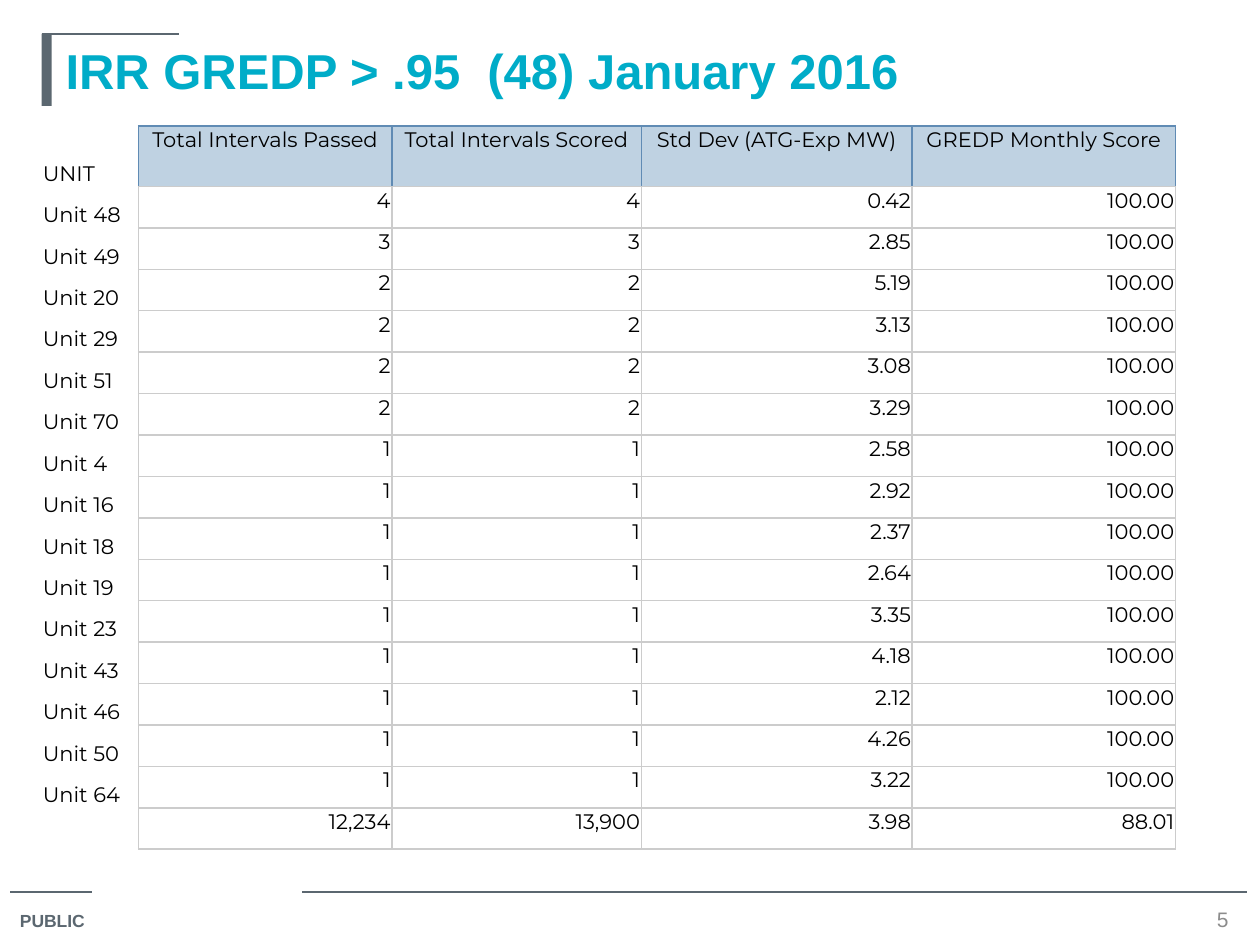
from dataclasses import dataclass

from lxml.etree import SubElement
from pptx import Presentation
from pptx.dml.color import RGBColor
from pptx.enum.shapes import MSO_CONNECTOR as Connector, MSO_SHAPE as Shape
from pptx.enum.text import MSO_ANCHOR as Anchor, MSO_AUTO_SIZE as AutoSize, PP_ALIGN as Align
from pptx.oxml.ns import qn
from pptx.util import Inches, Pt

COLORS = {
    "slate": "5B6770",
    "teal": "00ACC8",
    "page": "8C8C8C",
    "ink": "000000",
    "header": "BFD2E2",
    "header_rule": "608BB4",
    "grid_rule": "CCCCCC",
}
GRID_COLUMNS, GRID_ROWS = 100, 75
SLIDE_WIDTH, SLIDE_HEIGHT = Inches(10), Inches(7.5)
COLUMN_WIDTHS = [7.7, 20.1, 19.8, 21.5, 20.9]
HEADER_HEIGHT, UNIT_HEIGHT = 4.8, 3.29
HEADINGS = ["UNIT", "Total Intervals Passed", "Total Intervals Scored",
            "Std Dev (ATG-Exp MW)", "GREDP Monthly Score"]
UNIT_SCORES = [
    (48, 4, "0.42"), (49, 3, "2.85"), (20, 2, "5.19"), (29, 2, "3.13"),
    (51, 2, "3.08"), (70, 2, "3.29"), (4, 1, "2.58"), (16, 1, "2.92"),
    (18, 1, "2.37"), (19, 1, "2.64"), (23, 1, "3.35"), (43, 1, "4.18"),
    (46, 1, "2.12"), (50, 1, "4.26"), (64, 1, "3.22"),
]
TOTALS = ["", "12,234", "13,900", "3.98", "88.01"]


def across(columns):
    return round(SLIDE_WIDTH * columns / GRID_COLUMNS)


def down(rows):
    return round(SLIDE_HEIGHT * rows / GRID_ROWS)


@dataclass
class Box:
    left: float
    top: float
    width: float
    height: float

    def inner(self, left, top, width, height):
        return Box(self.left + left, self.top + top, width, height)

    def lengths(self):
        return across(self.left), down(self.top), across(self.width), down(self.height)


def color(name):
    return RGBColor.from_string(COLORS[name])


def apply(target, formats):
    for attribute, value in formats.items():
        setattr(target, attribute, value)


def write(frame, text, ink, font, align=Align.LEFT):
    paragraph = frame.paragraphs[0]
    paragraph.alignment = align
    if text:
        run = paragraph.add_run()
        run.text = text
        target = run.font
    else:
        target = paragraph.font
    apply(target, font)
    target.color.rgb = color(ink)


def add_rule(slide, box):
    left, top, width, height = box.lengths()
    rule = slide.shapes.add_connector(
        Connector.STRAIGHT, left, top, left + width, top + height)
    rule.line.color.rgb = color("slate")
    rule.line.width = Pt(0.75)
    SubElement(rule._element.spPr, qn("a:effectLst"))


def add_label(slide, box, text, ink, font, frame_format, align=Align.LEFT):
    frame = slide.shapes.add_textbox(*box.lengths()).text_frame
    apply(frame, frame_format)
    write(frame, text, ink, font, align)


def add_heading(slide, box):
    bar = slide.shapes.add_shape(Shape.RECTANGLE, *box.inner(0, 0, 0.8, 5.7).lengths())
    bar.shadow.inherit = False
    bar.fill.solid()
    bar.fill.fore_color.rgb = color("slate")
    bar.line.fill.background()
    add_rule(slide, box.inner(0, 0, 10.9, 0))

    title = slide.shapes.title
    left, top, width, height = box.inner(0.9, 0, box.width - 0.9, box.height).lengths()
    apply(title, {"left": left, "top": top, "width": width, "height": height})
    apply(title.text_frame, {"vertical_anchor": Anchor.TOP, "word_wrap": True,
                             "auto_size": AutoSize.NONE})
    write(title.text_frame, "IRR GREDP > .95  (48) January 2016", "teal",
          {"name": "Arial", "size": Pt(28), "bold": True})


def set_borders(cell, borders):
    properties = cell._tc.get_or_add_tcPr()
    for side in "LRTB":
        line = SubElement(properties, qn(f"a:ln{side}"), w=str(Pt(1)))
        if side in borders:
            fill = SubElement(line, qn("a:solidFill"))
            SubElement(fill, qn("a:srgbClr"), val=COLORS[borders[side]])
        else:
            SubElement(line, qn("a:noFill"))


def format_cell(cell, text, is_header, is_unit):
    apply(cell, {"margin_left": Inches(0.01), "margin_right": Inches(0.01),
                 "margin_top": Inches(0.01), "margin_bottom": 0,
                 "vertical_anchor": Anchor.BOTTOM if is_unit else Anchor.TOP})
    rule = "header_rule" if is_header else "grid_rule"
    if is_unit:
        borders, align = {"R": rule}, Align.LEFT
    else:
        borders = {"L": rule, "R": rule, "T": rule, "B": "grid_rule"}
        align = Align.CENTER if is_header else Align.RIGHT
    set_borders(cell, borders)
    if is_header and not is_unit:
        cell.fill.solid()
        cell.fill.fore_color.rgb = color("header")
    else:
        cell.fill.background()
    write(cell.text_frame, text, "ink", {"name": "Montserrat", "size": Pt(12)}, align)


def add_scores(slide, box):
    units = [[f"Unit {unit}", str(intervals), str(intervals), deviation, "100.00"]
             for unit, intervals, deviation in UNIT_SCORES]
    records = [HEADINGS, *units, TOTALS]
    scores = slide.shapes.add_table(len(records), len(HEADINGS), *box.lengths()).table
    apply(scores, {"first_row": False, "horz_banding": False})
    for column, width in zip(scores.columns, COLUMN_WIDTHS):
        column.width = across(width)
    for row_index, record in enumerate(records):
        scores.rows[row_index].height = down(UNIT_HEIGHT if row_index else HEADER_HEIGHT)
        for column_index, text in enumerate(record):
            format_cell(scores.cell(row_index, column_index), text,
                        row_index == 0, column_index == 0)


def add_footer(slide, box):
    add_rule(slide, box.inner(0.2, 0, 6.5, 0))
    add_rule(slide, box.inner(23.4, 0, 75, 0))
    add_label(slide, box.inner(0, 0.9, 7.7, 2.8), "PUBLIC", "slate",
              {"name": "Arial", "size": Pt(10), "bold": True}, {"word_wrap": False})
    add_label(slide, box.inner(95.2, 1, 2.5, 2.3), "5", "page",
              {"name": "Arial", "size": Pt(12)},
              {"word_wrap": True, "vertical_anchor": Anchor.MIDDLE,
               "margin_left": 0, "margin_right": 0, "margin_top": 0, "margin_bottom": 0},
              Align.CENTER)


def main():
    deck = Presentation()
    apply(deck, {"slide_width": SLIDE_WIDTH, "slide_height": SLIDE_HEIGHT})
    slide = deck.slides.add_slide(deck.slide_layouts[5])
    add_footer(slide, Box(0.6, 70.8, 98.4, 3.7))
    add_heading(slide, Box(3.3, 2.7, 93.4, 7.3))
    add_scores(slide, Box(3.3, 10, 90, 57.5))
    deck.save("out.pptx")


if __name__ == "__main__":
    main()
